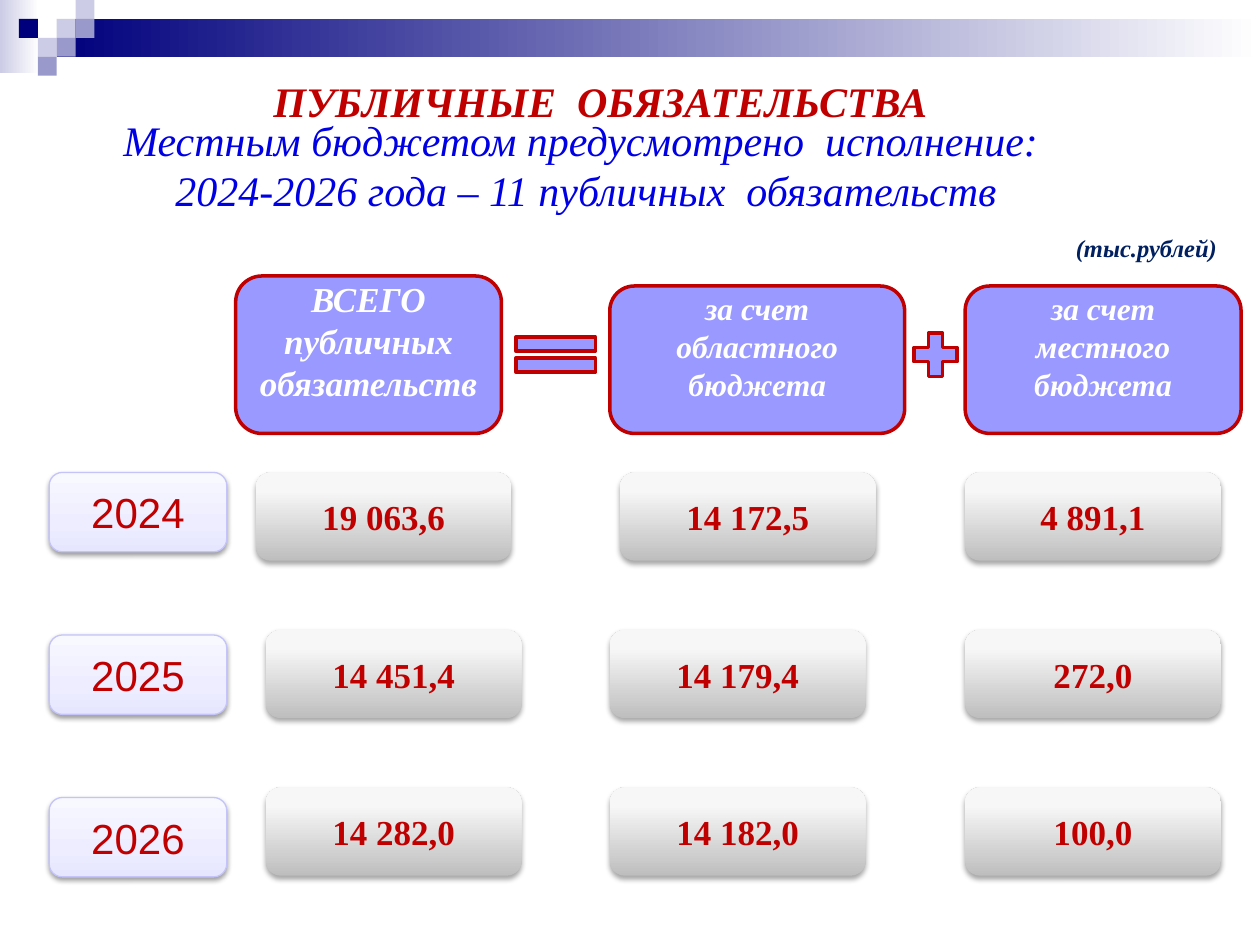
from lxml import etree
from pptx import Presentation
from pptx.dml.color import RGBColor
from pptx.enum.shapes import MSO_SHAPE
from pptx.enum.text import MSO_ANCHOR, MSO_AUTO_SIZE, PP_ALIGN
from pptx.oxml.ns import qn
from pptx.util import Inches, Pt

RECTANGLE = MSO_SHAPE.RECTANGLE
ROUNDED = MSO_SHAPE.ROUNDED_RECTANGLE
EQUAL = MSO_SHAPE.MATH_EQUAL
PLUS = MSO_SHAPE.MATH_PLUS
CENTER, LEFT = PP_ALIGN.CENTER, PP_ALIGN.LEFT
TOP, MIDDLE = MSO_ANCHOR.TOP, MSO_ANCHOR.MIDDLE
NO_AUTOFIT = MSO_AUTO_SIZE.NONE

RED = RGBColor(0xC0, 0x00, 0x00)
BLUE = RGBColor(0x00, 0x00, 0xE4)
NAVY = RGBColor(0x00, 0x00, 0x7D)
DARK_BLUE = RGBColor(0x00, 0x20, 0x60)
VIOLET = RGBColor(0x99, 0x99, 0xFF)
LILAC = RGBColor(0xCC, 0xCC, 0xE6)
MAUVE = RGBColor(0x99, 0x99, 0xCC)
YEAR_LINE = RGBColor(0xC4, 0xC4, 0xFB)
WHITE = RGBColor(0xFF, 0xFF, 0xFF)
BLACK = RGBColor(0x00, 0x00, 0x00)
GRAY_STOPS = [(0, RGBColor(0xBE, 0xBE, 0xBE)), (80, RGBColor(0xF7, 0xF7, 0xF7)),
              (100, RGBColor(0xF8, 0xF8, 0xF8))]
YEAR_STOPS = [(0, RGBColor(0xE6, 0xE6, 0xFF)), (35, RGBColor(0xED, 0xED, 0xFF)),
              (100, RGBColor(0xF8, 0xF8, 0xFF))]

SERIF, SANS = "Times New Roman", "Arial"
ROWS = [
    ("2024", (2.03, 4.92, 7.66), ("19 063,6", "14 172,5", "4 891,1")),
    ("2025", (2.11, 4.84, 7.66), ("14 451,4", "14 179,4", "272,0")),
    ("2026", (2.11, 4.84, 7.66), ("14 282,0", "14 182,0", "100,0")),
]
HEADERS = [
    ((1.87, 2.19, 2.11, 1.25), ["ВСЕГО", "публичных", "обязательств"], 20),
    ((4.84, 2.27, 2.34, 1.17), ["за счет областного бюджета"], 18),
    ((7.66, 2.27, 2.19, 1.17), ["за счет местного", "бюджета"], 18),
]
SIGNS = [(EQUAL, (3.98, 2.58, 0.86, 0.47)), (PLUS, (7.19, 2.58, 0.47, 0.47))]
SQUARES = [(3, 1, LILAC), (4, 0, LILAC), (4, 1, MAUVE), (2, 2, LILAC),
           (1, 1, NAVY), (3, 2, MAUVE), (2, 3, MAUVE)]


def inches(box):
    """Turn a box of plain numbers into lengths."""
    return [Inches(value) for value in box]


def write(frame, lines, size, color, font=SERIF, bold=False, italic=False,
          align=CENTER, anchor=MIDDLE, wrap=True):
    """Fill a text frame with one formatted paragraph per line."""
    frame.word_wrap = wrap
    frame.auto_size = NO_AUTOFIT
    frame.vertical_anchor = anchor
    for index, line in enumerate(lines):
        para = frame.add_paragraph() if index else frame.paragraphs[0]
        para.alignment = align
        span = para.add_run()
        span.text = line
        span.font.size = Pt(size)
        span.font.name = font
        span.font.bold = bold
        span.font.italic = italic
        span.font.color.rgb = color


def set_gradient(shape, stops, angle):
    """Give a shape a linear gradient with any number of stops."""
    shape.fill.gradient()
    shape.fill.gradient_angle = angle
    stop_list = shape.fill._xPr.find(qn("a:gradFill")).find(qn("a:gsLst"))
    for stop in list(stop_list):
        stop_list.remove(stop)
    for position, color in stops:
        stop = etree.SubElement(stop_list, qn("a:gs"), pos=str(position * 1000))
        etree.SubElement(stop, qn("a:srgbClr"), val=str(color))


def set_shadow(shape, opacity, blur, distance):
    """Drop a soft black shadow straight below a shape."""
    effects = shape.element.spPr.find(qn("a:effectLst"))
    shadow = etree.SubElement(effects, qn("a:outerShdw"), blurRad=str(Pt(blur)),
                              dist=str(Pt(distance)), dir="5400000", rotWithShape="0")
    color = etree.SubElement(shadow, qn("a:srgbClr"), val=str(BLACK))
    etree.SubElement(color, qn("a:alpha"), val=str(opacity * 1000))


def add_panel(page, kind, box, fill=None, stops=None, angle=0, line=None, width=2):
    """Add a preset shape with a flat or gradient fill and an optional line."""
    panel = page.shapes.add_shape(kind, *inches(box))
    panel.shadow.inherit = False
    if stops:
        set_gradient(panel, stops, angle)
    else:
        panel.fill.solid()
        panel.fill.fore_color.rgb = fill
    if line is None:
        panel.line.fill.background()
    else:
        panel.line.color.rgb = line
        panel.line.width = Pt(width)
    return panel


def add_banner(page, step=0.15):
    """Draw the gradient band and the chequered squares at the top."""
    add_panel(page, RECTANGLE, (0, 0, 0.31, 0.58), stops=[(0, LILAC), (100, WHITE)])
    add_panel(page, RECTANGLE, (0.45, 0.15, 9.55, 0.3), stops=[(0, NAVY), (100, WHITE)])
    for column, row, color in SQUARES:
        add_panel(page, RECTANGLE, (column * step, row * step, step, step), color)


def add_title(page, box, text):
    """Move and format the title placeholder."""
    title = page.shapes.title
    title.left, title.top, title.width, title.height = inches(box)
    write(title.text_frame, [text], 24, RED, bold=True, italic=True, anchor=TOP)


def add_text(page, box, lines, size, color, **style):
    """Add a text box anchored at its top."""
    text_box = page.shapes.add_textbox(*inches(box))
    write(text_box.text_frame, lines, size, color, italic=True, anchor=TOP, **style)


def add_header(page, box, lines, size):
    """Add a column heading whose text sits above the middle."""
    header = add_panel(page, ROUNDED, box, VIOLET, line=RED)
    header.text_frame.margin_top = Inches(0)
    header.text_frame.margin_bottom = Inches(0.22)
    write(header.text_frame, lines, size, WHITE, bold=True, italic=True)


def add_year(page, box, year):
    """Add a year label."""
    label = add_panel(page, ROUNDED, box, stops=YEAR_STOPS, angle=90,
                      line=YEAR_LINE, width=0.75)
    set_shadow(label, 38, 3.1, 1.6)
    write(label.text_frame, [year], 24, RED, font=SANS)


def add_amount(page, box, amount):
    """Add a gray tile holding one amount."""
    tile = add_panel(page, ROUNDED, box, stops=GRAY_STOPS, angle=90)
    set_shadow(tile, 35, 3.1, 1.8)
    write(tile.text_frame, [amount], 20, RED, bold=True)


def main():
    """Build the slide and save the deck."""
    deck = Presentation()
    deck.slide_width, deck.slide_height = Inches(10), Inches(7.5)
    page = deck.slides.add_slide(deck.slide_layouts[5])
    add_banner(page)
    add_title(page, (0.86, 0.55, 7.81, 0.5), "ПУБЛИЧНЫЕ  ОБЯЗАТЕЛЬСТВА")
    add_text(page, (0.16, 0.86, 8.98, 0.91),
             ["Местным бюджетом предусмотрено  исполнение: ",
              "2024-2026 года – 11 публичных  обязательств"], 24, BLUE)
    add_text(page, (8.44, 1.8, 1.33, 0.34), ["(тыс.рублей)"], 14, DARK_BLUE,
             bold=True, align=LEFT, wrap=False)
    for box, lines, size in HEADERS:
        add_header(page, box, lines, size)
    for kind, box in SIGNS:
        add_panel(page, kind, box, VIOLET, line=RED)
    for index, (year, lefts, amounts) in enumerate(ROWS):
        add_year(page, (0.39, 3.75 + index * 1.29, 1.41, 0.63), year)
        for left, amount in zip(lefts, amounts):
            add_amount(page, (left, 3.75 + index * 1.25, 2.03, 0.7), amount)
    deck.save("out.pptx")


if __name__ == "__main__":
    main()
